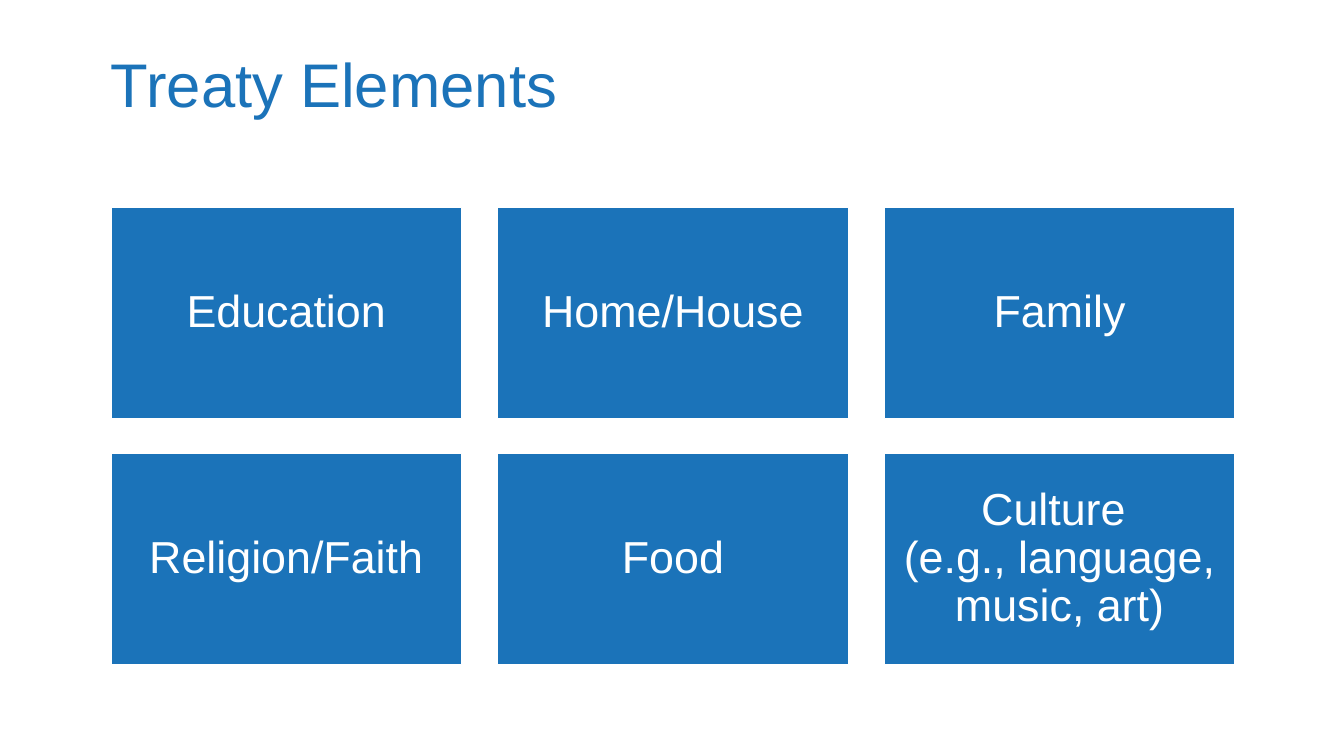
from dataclasses import dataclass

from pptx import Presentation
from pptx.dml.color import RGBColor
from pptx.enum.shapes import MSO_SHAPE
from pptx.enum.text import MSO_ANCHOR, MSO_AUTO_SIZE, PP_ALIGN
from pptx.slide import Slide
from pptx.text.text import TextFrame
from pptx.util import Inches, Pt


@dataclass(frozen=True)
class Theme:
    blue: RGBColor = RGBColor(0x1B, 0x73, 0xB9)
    white: RGBColor = RGBColor(0xFF, 0xFF, 0xFF)
    font: str = "Arial"
    heading_size: float = 44
    element_size: float = 32
    line_spacing: float = 0.9


@dataclass(frozen=True)
class Grid:
    left: float = 1.1
    top: float = 2.06
    width: float = 11.15
    cell_width: float = 3.48
    cell_height: float = 2.09
    row_gap: float = 0.35
    columns: int = 3

    @property
    def column_gap(self) -> float:
        return (self.width - self.columns * self.cell_width) / (self.columns - 1)


@dataclass(frozen=True)
class TreatyElement:
    label: str
    row: int
    column: int


THEME = Theme()
GRID = Grid()
LABELS = (
    "Education",
    "Home/House",
    "Family",
    "Religion/Faith",
    "Food",
    "Culture \v(e.g., language, music, art)",
)
ELEMENTS = [
    TreatyElement(label, *divmod(position, GRID.columns))
    for position, label in enumerate(LABELS)
]


def write_text(frame: TextFrame, words: str, size: float, color: RGBColor,
               align: PP_ALIGN, anchor: MSO_ANCHOR, margin: float) -> None:
    frame.text = words
    inset = Inches(margin)
    frame_format = {
        "auto_size": MSO_AUTO_SIZE.NONE,
        "word_wrap": True,
        "vertical_anchor": anchor,
        "margin_left": inset,
        "margin_top": inset,
        "margin_right": inset,
        "margin_bottom": inset,
    }
    for key, value in frame_format.items():
        setattr(frame, key, value)
    paragraph = frame.paragraphs[0]
    paragraph.alignment = align
    paragraph.line_spacing = THEME.line_spacing
    for run in paragraph.runs:
        for key, value in {"name": THEME.font, "size": Pt(size)}.items():
            setattr(run.font, key, value)
        run.font.color.rgb = color


def place_heading(slide: Slide, words: str) -> None:
    heading = slide.shapes.title
    place = {"left": GRID.left, "top": 0.54, "width": 10.78, "height": 0.59}
    for key, value in place.items():
        setattr(heading, key, Inches(value))
    write_text(heading.text_frame, words, THEME.heading_size, THEME.blue,
               PP_ALIGN.LEFT, MSO_ANCHOR.TOP, 0)


def draw_element(slide: Slide, element: TreatyElement) -> None:
    tile = slide.shapes.add_shape(
        MSO_SHAPE.RECTANGLE,
        Inches(GRID.left + element.column * (GRID.cell_width + GRID.column_gap)),
        Inches(GRID.top + element.row * (GRID.cell_height + GRID.row_gap)),
        Inches(GRID.cell_width),
        Inches(GRID.cell_height),
    )
    tile.shadow.inherit = False
    tile.fill.solid()
    tile.fill.fore_color.rgb = THEME.blue
    tile.line.color.rgb = THEME.white
    tile.line.width = Pt(1)
    write_text(tile.text_frame, element.label, THEME.element_size, THEME.white,
               PP_ALIGN.CENTER, MSO_ANCHOR.MIDDLE, 0.13)


def main() -> None:
    deck = Presentation()
    deck.slide_width = Inches(13.33)
    deck.slide_height = Inches(7.5)
    slide = deck.slides.add_slide(deck.slide_layouts.get_by_name("Title Only"))
    place_heading(slide, "Treaty Elements")
    for element in ELEMENTS:
        draw_element(slide, element)
    deck.save("out.pptx")


if __name__ == "__main__":
    main()
